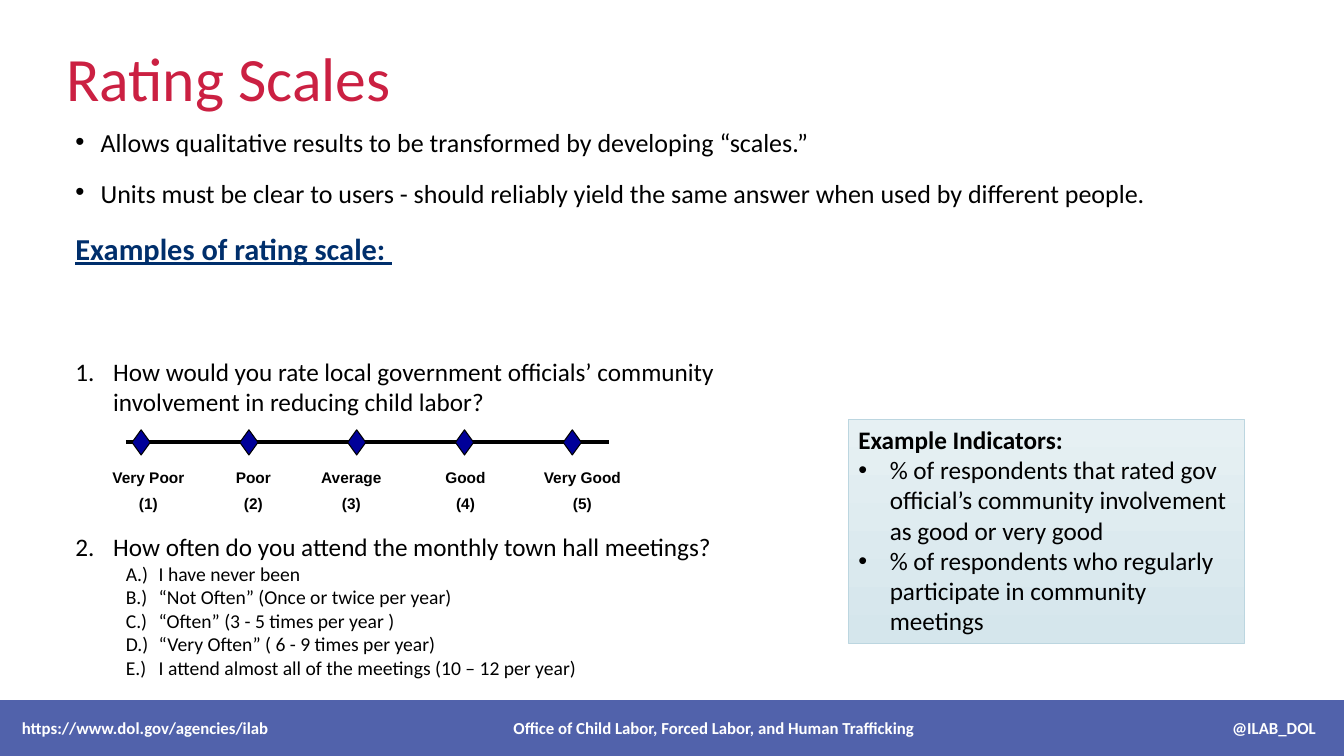
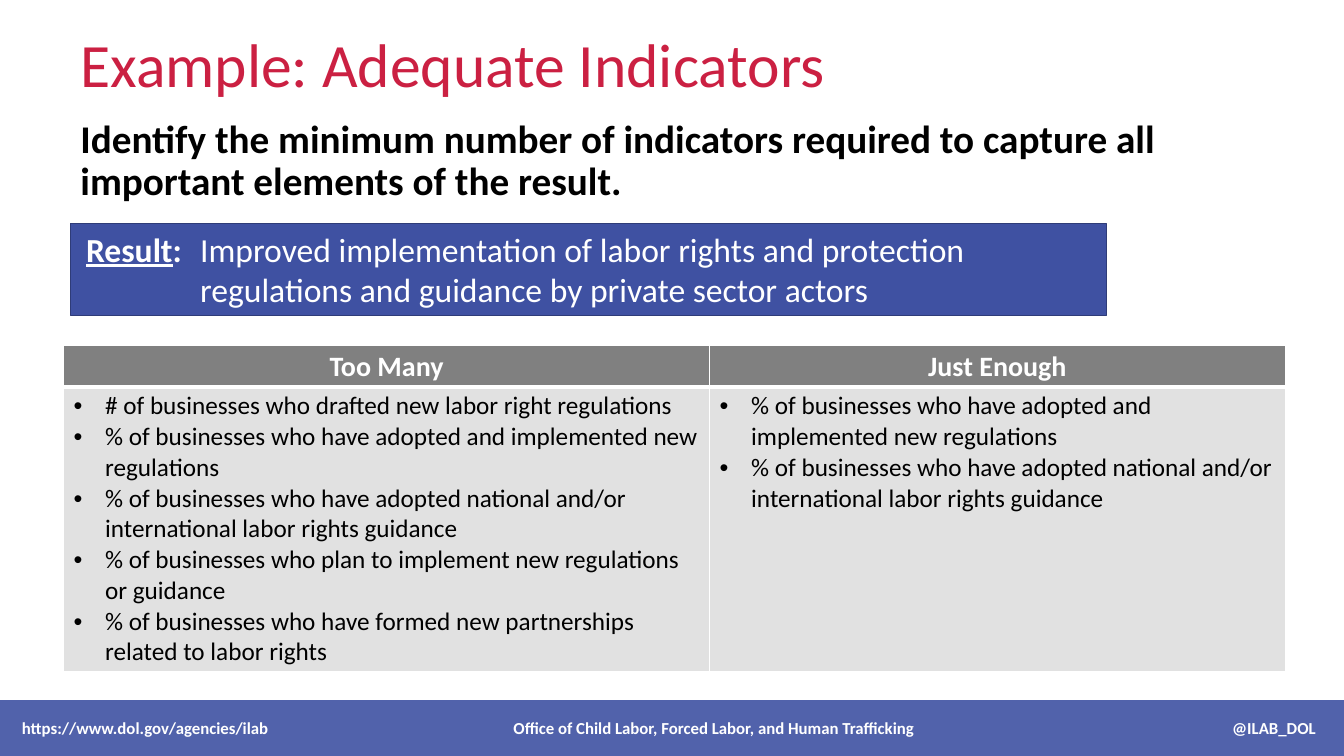
from collections import namedtuple
from dataclasses import dataclass

from lxml import etree
from pptx import Presentation
from pptx.dml.color import RGBColor
from pptx.enum.shapes import MSO_CONNECTOR, MSO_SHAPE
from pptx.enum.text import MSO_ANCHOR, PP_ALIGN
from pptx.oxml.ns import qn
from pptx.util import Pt

RECTANGLE = MSO_SHAPE.RECTANGLE
DIAMOND = MSO_SHAPE.DIAMOND
STRAIGHT = MSO_CONNECTOR.STRAIGHT
TOP, MIDDLE, BOTTOM = MSO_ANCHOR.TOP, MSO_ANCHOR.MIDDLE, MSO_ANCHOR.BOTTOM
LEFT, CENTER, RIGHT = PP_ALIGN.LEFT, PP_ALIGN.CENTER, PP_ALIGN.RIGHT

Box = namedtuple("Box", "left top width height")


@dataclass(frozen=True)
class Theme:
    font: str = "Calibri"
    scale_font: str = "Arial"
    red: str = "CB2042"
    navy: str = "002F6C"
    blue: str = "3F51A2"
    dark_blue: str = "2F3C78"
    marker: str = "000099"
    black: str = "000000"
    white: str = "FFFFFF"
    header_gray: str = "808080"
    cell_gray: str = "E1E1E1"
    pale_top: str = "E6F0F3"
    pale_bottom: str = "D5E6EC"
    pale_line: str = "BCD6E0"
    title: float = 44
    statement: float = 28
    result: float = 24
    heading: float = 21.7
    table_header: float = 20
    intro: float = 18.6
    body: float = 18
    option: float = 14
    footer: float = 12
    scale: float = 11


THEME = Theme()
SLIDE = Box(0, 0, 960, 540)
FOOTER = Box(0, 500, 960, 40)
BULLET_INDENT = 22.5


def points(values):
    return [Pt(value) for value in values]


def rgb(color):
    return RGBColor.from_string(color)


def add_run(paragraph, text, size, color=THEME.black, bold=False,
            underline=False, font=THEME.font):
    run = paragraph.add_run()
    run.text = text
    run.font.name = font
    run.font.size = Pt(size)
    run.font.bold = bold
    run.font.underline = underline
    run.font.color.rgb = rgb(color)


def next_paragraph(frame, align=LEFT, margin=0, indent=0, bullet=False,
                   line_spacing=1.0, before=0):
    paragraph = frame.paragraphs[0]
    if paragraph.runs:
        paragraph = frame.add_paragraph()
    paragraph.alignment = align
    paragraph.line_spacing = line_spacing
    paragraph.space_before = Pt(before)
    properties = paragraph._p.get_or_add_pPr()
    properties.set("marL", str(Pt(margin)))
    properties.set("indent", str(Pt(indent)))
    if bullet:
        etree.SubElement(properties, qn("a:buFont"), typeface="Arial")
        etree.SubElement(properties, qn("a:buChar"), char="•")
    return paragraph


def add_bullets(frame, items):
    for item in items:
        paragraph = next_paragraph(frame, margin=BULLET_INDENT,
                                   indent=-BULLET_INDENT, bullet=True)
        add_run(paragraph, item, THEME.body)


def add_text_box(slide, box, anchor=TOP):
    frame = slide.shapes.add_textbox(*points(box)).text_frame
    frame.word_wrap = True
    frame.vertical_anchor = anchor
    return frame


def add_panel(slide, box, kind=RECTANGLE, fill=None, line=None, line_width=1):
    shape = slide.shapes.add_shape(kind, *points(box))
    shape.shadow.inherit = False
    if fill:
        shape.fill.solid()
        shape.fill.fore_color.rgb = rgb(fill)
    if line:
        shape.line.color.rgb = rgb(line)
        shape.line.width = Pt(line_width)
    else:
        shape.line.fill.background()
    shape.text_frame.word_wrap = True
    shape.text_frame.vertical_anchor = TOP
    return shape


def add_title(slide, box, text):
    frame = add_text_box(slide, box, BOTTOM)
    add_run(next_paragraph(frame, line_spacing=0.9), text, THEME.title, THEME.red)


def add_footer(slide, box):
    band = add_panel(slide, box, fill=THEME.blue)
    color = band.fill._xPr.find(qn("a:solidFill"))[0]
    etree.SubElement(color, qn("a:alpha"), val="90000")
    for text, left, width, align in (
        ("https://www.dol.gov/agencies/ilab", 8.5, 250, LEFT),
        ("Office of Child Labor, Forced Labor, and Human Trafficking", 310, 400, CENTER),
        ("@ILAB_DOL", 797, 150, RIGHT),
    ):
        part = Box(box.left + left, box.top, width, box.height)
        frame = add_text_box(slide, part, MIDDLE)
        add_run(next_paragraph(frame, align), text, THEME.footer, THEME.white, True)


def add_introduction(slide, box):
    frame = add_text_box(slide, box)
    for before, text in (
        (0, "Allows qualitative results to be transformed by developing “scales.”"),
        (20.5, "Units must be clear to users - should reliably yield the same answer "
               "when used by different people."),
    ):
        paragraph = next_paragraph(frame, margin=18, indent=-18, bullet=True,
                                   line_spacing=0.7, before=before)
        add_run(paragraph, text, THEME.intro)
    paragraph = next_paragraph(frame, line_spacing=0.7, before=23)
    add_run(paragraph, "Examples of rating scale: ", THEME.heading, THEME.navy, True, True)


def add_question(slide, box, question, options=()):
    frame = add_text_box(slide, box)
    add_run(next_paragraph(frame, margin=27, indent=-27), question, THEME.body)
    for letter, option in zip("ABCDE", options):
        paragraph = next_paragraph(frame, margin=59.5, indent=-23.5)
        add_run(paragraph, f"{letter}.)\t{option}", THEME.option)


def add_rating_scale(slide, box):
    marker_width, marker_height, pitch, first_center = 13, 18, 77, 10.8
    label_width, label_top = 90, 23.5
    axis_y = box.top + marker_height / 2
    axis = slide.shapes.add_connector(
        STRAIGHT, *points((box.left, axis_y, box.left + box.width, axis_y)))
    axis.line.color.rgb = rgb(THEME.black)
    axis.line.width = Pt(3)
    etree.SubElement(axis._element.spPr, qn("a:effectLst"))
    ratings = (("Very Poor", 16), ("Poor", 91), ("Average", 161),
               ("Good", 242.5), ("Very Good", 326))
    for index, (label, label_center) in enumerate(ratings):
        marker_left = box.left + first_center + index * pitch - marker_width / 2
        add_panel(slide, Box(marker_left, box.top, marker_width, marker_height),
                  DIAMOND, THEME.marker, THEME.black, 0.75)
        label_box = Box(box.left + label_center - label_width / 2,
                        box.top + label_top, label_width, box.height - label_top)
        frame = add_text_box(slide, label_box)
        for before, text in ((0, label), (5.5, f"({index + 1})")):
            add_run(next_paragraph(frame, CENTER, before=before), text,
                    THEME.scale, bold=True, font=THEME.scale_font)


def add_indicator_panel(slide, box):
    panel = add_panel(slide, box, line=THEME.pale_line, line_width=0.5)
    panel.fill.gradient()
    panel.fill.gradient_angle = 270
    for stop, color in zip(panel.fill.gradient_stops, (THEME.pale_top, THEME.pale_bottom)):
        stop.color.rgb = rgb(color)
    frame = panel.text_frame
    add_run(next_paragraph(frame), "Example Indicators:", THEME.body, bold=True)
    add_bullets(frame, (
        "% of respondents that rated gov official’s community involvement "
        "as good or very good",
        "% of respondents who regularly participate in community meetings",
    ))


def add_statement(slide, box):
    frame = add_text_box(slide, box)
    add_run(next_paragraph(frame, line_spacing=0.9),
            "Identify the minimum number of indicators required to capture all "
            "important elements of the result.", THEME.statement, bold=True)


def add_result(slide, box):
    panel = add_panel(slide, box, fill=THEME.blue, line=THEME.dark_blue)
    paragraph = next_paragraph(panel.text_frame, margin=85.5, indent=-81.5)
    for text, bold, underline in (
        ("Result", True, True),
        (":\t", True, False),
        ("Improved implementation of labor rights and protection regulations "
         "and guidance by private sector actors", False, False),
    ):
        add_run(paragraph, text, THEME.result, THEME.white, bold, underline)


def style_cell(cell, fill, bottom_width):
    cell.margin_top = cell.margin_bottom = Pt(2.6)
    properties = cell._tc.get_or_add_tcPr()
    for side, width in (("L", 1), ("R", 1), ("T", 1), ("B", bottom_width)):
        border = etree.SubElement(properties, qn(f"a:ln{side}"), w=str(Pt(width)))
        solid = etree.SubElement(border, qn("a:solidFill"))
        etree.SubElement(solid, qn("a:srgbClr"), val=THEME.white)
    cell.fill.solid()
    cell.fill.fore_color.rgb = rgb(fill)


def add_comparison(slide, box):
    header_height, first_width = 29.6, 461.5
    table = slide.shapes.add_table(2, 2, *points(box)).table
    table.horz_banding = False
    table.rows[0].height = Pt(header_height)
    table.rows[1].height = Pt(box.height - header_height)
    table.columns[0].width = Pt(first_width)
    table.columns[1].width = Pt(box.width - first_width)
    adopted = "% of businesses who have adopted and implemented new regulations"
    guidance = ("% of businesses who have adopted national and/or "
                "international labor rights guidance")
    for column, (heading, items) in enumerate((
        ("Too Many", (
            "# of businesses who drafted new labor right regulations",
            adopted,
            guidance,
            "% of businesses who plan to implement new regulations or guidance",
            "% of businesses who have formed new partnerships related to labor rights",
        )),
        ("Just Enough", (adopted, guidance)),
    )):
        header, content = table.cell(0, column), table.cell(1, column)
        style_cell(header, THEME.header_gray, 3)
        add_run(next_paragraph(header.text_frame, CENTER), heading,
                THEME.table_header, THEME.white, True)
        style_cell(content, THEME.cell_gray, 1)
        add_bullets(content.text_frame, items)


def build_rating_scales(slide):
    add_title(slide, Box(40.3, 10, 849, 75.6), "Rating Scales")
    add_introduction(slide, Box(46.8, 93, 821.5, 117))
    add_question(slide, Box(46.8, 250.6, 549, 51),
                 "1.\tHow would you rate local government officials’ community "
                 "involvement in reducing child labor?")
    add_rating_scale(slide, Box(90, 307, 345, 64))
    add_question(slide, Box(46.8, 376, 549, 115),
                 "2.\tHow often do you attend the monthly town hall meetings?", (
                     "I have never been",
                     "“Not Often” (Once or twice per year)",
                     "“Often” (3 - 5 times per year )",
                     "“Very Often” ( 6 - 9 times per year)",
                     "I attend almost all of the meetings (10 – 12 per year)",
                 ))
    add_indicator_panel(slide, Box(606, 299.5, 283, 160))


def build_adequate_indicators(slide):
    add_title(slide, Box(50.4, 0, 811, 75.6), "Example: Adequate Indicators")
    add_statement(slide, Box(50.4, 82, 834.5, 69))
    add_result(slide, Box(50.4, 159.8, 740, 65.5))
    add_comparison(slide, Box(45.4, 247, 872.6, 232.6))


def main():
    presentation = Presentation()
    presentation.slide_width = Pt(SLIDE.width)
    presentation.slide_height = Pt(SLIDE.height)
    blank = presentation.slide_layouts[6]
    for build in (build_rating_scales, build_adequate_indicators):
        slide = presentation.slides.add_slide(blank)
        build(slide)
        add_footer(slide, FOOTER)
    presentation.save("out.pptx")


if __name__ == "__main__":
    main()
